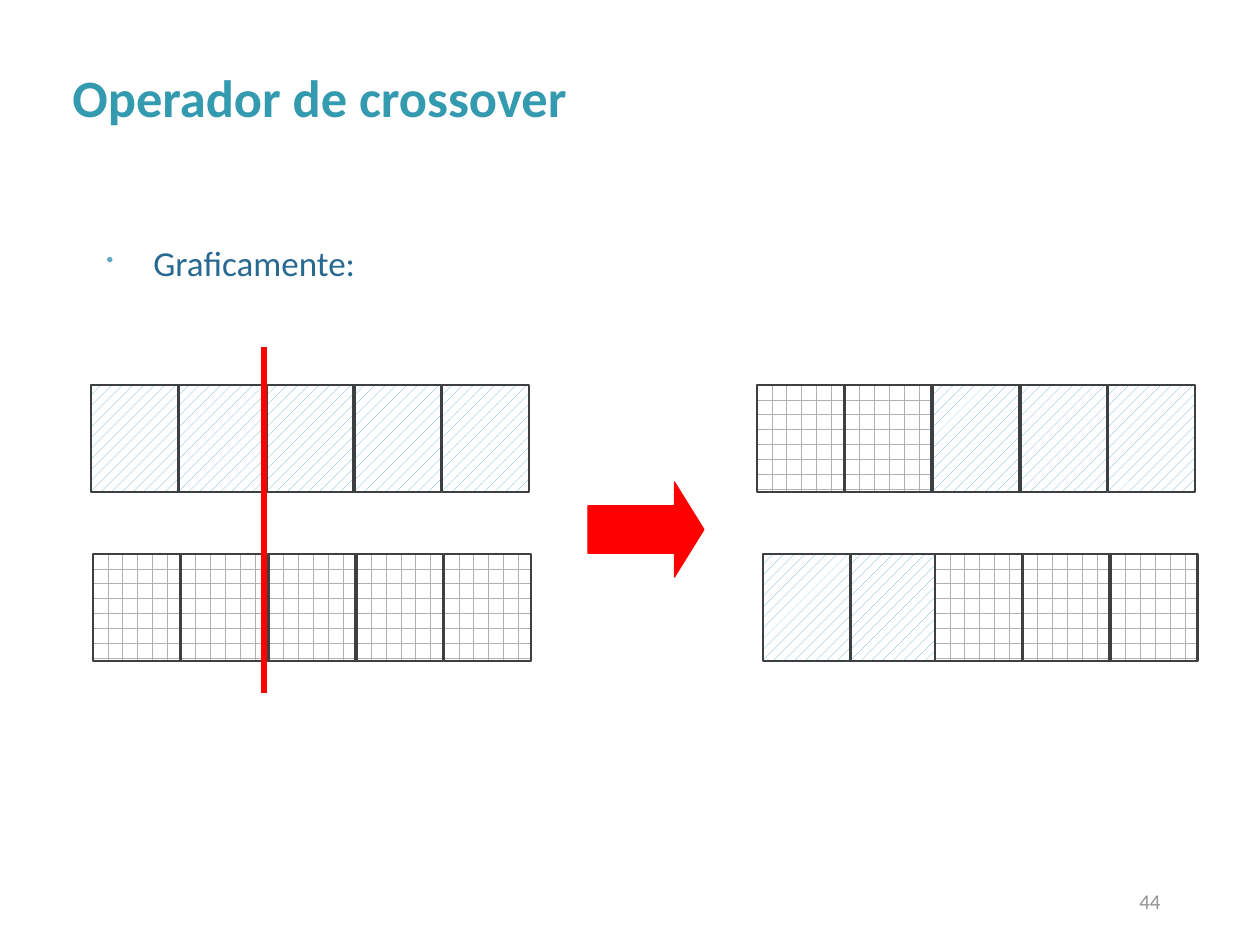
from lxml.etree import SubElement
from pptx import Presentation
from pptx.dml.color import RGBColor
from pptx.enum.dml import MSO_PATTERN as PATTERN
from pptx.enum.shapes import MSO_CONNECTOR, MSO_SHAPE
from pptx.enum.text import MSO_ANCHOR as ANCHOR, PP_ALIGN as ALIGN
from pptx.oxml.ns import qn
from pptx.util import Pt

PX = 914400 / 126
FONT = "Calibri"
COLORS = {
    "title": "339AAF", "body": "286991", "number": "929393", "red": "FF0000",
    "teal": "5FACC0", "gray": "AFB2B4", "outline": "3D3F41", "white": "FFFFFF",
}
PARENTS = {
    "A": (PATTERN.PERCENT_20, "teal"),
    "B": (PATTERN.HORIZONTAL_BRICK, "gray"),
}
CELL_WIDTH, CELL_HEIGHT = 87, 107
FIVE_CELLS = 438  # px from the first left edge to the last right edge
TOP_ROW, BOTTOM_ROW = 385, 554
# left, top, parent of each gene
GENE_RUNS = [
    (91, TOP_ROW, "AAAAA"),
    (93, BOTTOM_ROW, "BBBBB"),
    (757, TOP_ROW, "BBAAA"),
    (763, BOTTOM_ROW, "AA"),
    (935, BOTTOM_ROW, "BBB"),
]
CUT = (264, 347, 264, 693)
ARROW = (588, 482, 116, 95)


def px(*lengths):
    return [round(length * PX) for length in lengths]


def color(name):
    return RGBColor.from_string(COLORS[name])


def add_bullet(paragraph, indent):
    properties = paragraph._p.get_or_add_pPr()
    properties.set("marL", str(indent))
    properties.set("indent", str(-indent))
    bullet_color = SubElement(properties, qn("a:buClr"))
    SubElement(bullet_color, qn("a:srgbClr"), val=COLORS["teal"])
    SubElement(properties, qn("a:buSzPct"), val="60000")
    SubElement(properties, qn("a:buChar"), char="•")


def add_text(slide, text, box, size, ink, bold=False, align=ALIGN.LEFT,
             anchor=ANCHOR.TOP, spacing=None, bullet_indent=None):
    frame = slide.shapes.add_textbox(*px(*box)).text_frame
    frame.word_wrap = True
    frame.vertical_anchor = anchor
    paragraph = frame.paragraphs[0]
    paragraph.alignment = align
    if bullet_indent:
        add_bullet(paragraph, *px(bullet_indent))
    if spacing:
        paragraph.line_spacing = spacing
    run = paragraph.add_run()
    run.text = text
    run.font.name = FONT
    run.font.size = Pt(size)
    run.font.bold = bold
    run.font.color.rgb = color(ink)


def add_genes(slide, left, top, genes):
    for index, parent in enumerate(genes):
        x = left + index * (FIVE_CELLS - CELL_WIDTH) / 4
        cell = slide.shapes.add_shape(
            MSO_SHAPE.RECTANGLE, *px(x, top, CELL_WIDTH, CELL_HEIGHT))
        cell.shadow.inherit = False
        pattern, ink = PARENTS[parent]
        cell.fill.patterned()
        cell.fill.pattern = pattern
        cell.fill.fore_color.rgb = color(ink)
        cell.fill.back_color.rgb = color("white")
        cell.line.color.rgb = color("outline")
        cell.line.width = Pt(1.5)


def add_cut(slide):
    cut = slide.shapes.add_connector(MSO_CONNECTOR.STRAIGHT, *px(*CUT))
    cut.line.color.rgb = color("red")
    cut.line.width = Pt(3)
    SubElement(cut._element.spPr, qn("a:effectLst"))


def add_arrow(slide):
    arrow = slide.shapes.add_shape(MSO_SHAPE.RIGHT_ARROW, *px(*ARROW))
    arrow.shadow.inherit = False
    arrow.adjustments[0] = 0.5
    arrow.adjustments[1] = 0.31
    arrow.fill.solid()
    arrow.fill.fore_color.rgb = color("red")
    arrow.line.color.rgb = color("red")
    arrow.line.width = Pt(0.75)


def main():
    presentation = Presentation()
    presentation.slide_width, presentation.slide_height = px(1260, 945)
    slide = presentation.slides.add_slide(presentation.slide_layouts[6])
    add_text(slide, "Operador de crossover", (60, 38, 1140, 97), 30, "title",
             bold=True, anchor=ANCHOR.BOTTOM, spacing=0.9)
    for left, top, genes in GENE_RUNS:
        add_genes(slide, left, top, genes)
    add_cut(slide)
    add_arrow(slide)
    add_text(slide, "Graficamente:", (94, 231, 1134, 567), 20, "body",
             align=ALIGN.JUSTIFY, spacing=1.1, bullet_indent=47)
    add_text(slide, "44", (890, 876, 283, 50), 12, "number",
             align=ALIGN.RIGHT, anchor=ANCHOR.MIDDLE)
    presentation.save("out.pptx")


if __name__ == "__main__":
    main()
